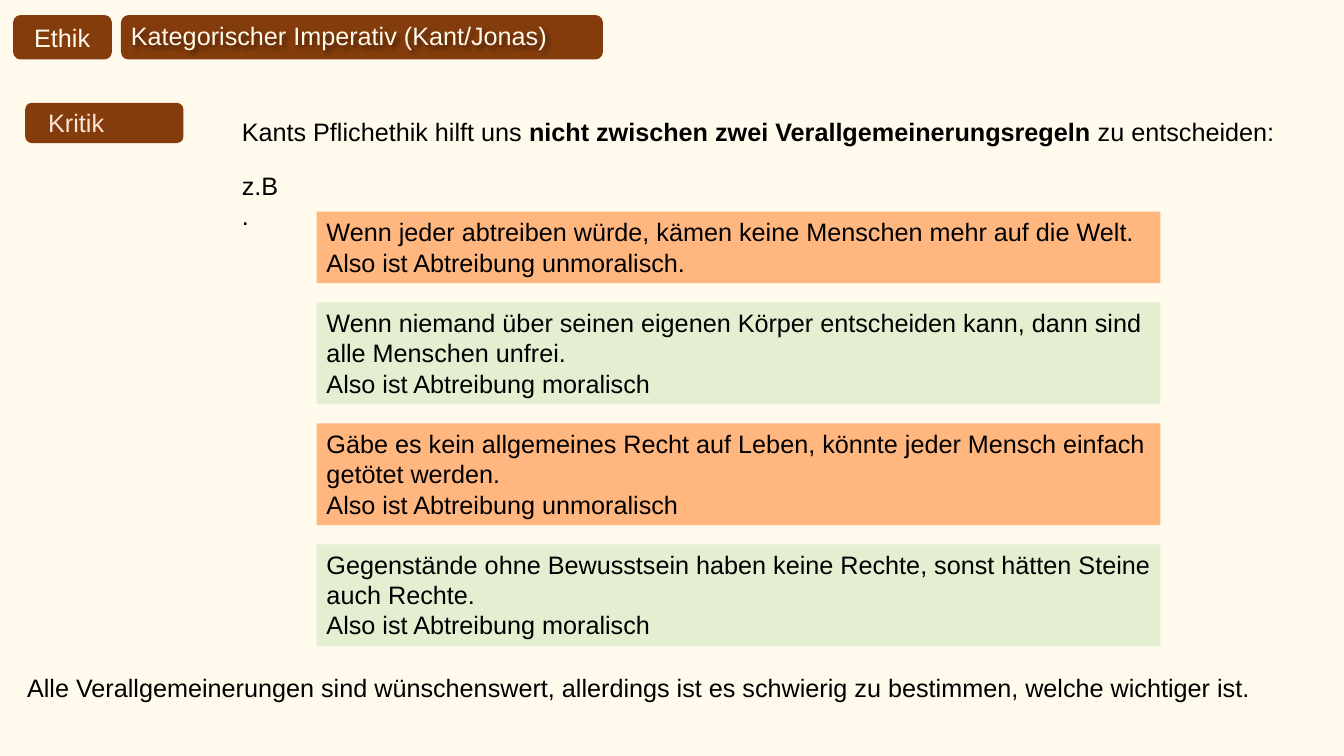
from lxml.etree import SubElement
from pptx import Presentation
from pptx.dml.color import RGBColor
from pptx.enum.shapes import MSO_SHAPE
from pptx.enum.text import MSO_ANCHOR, PP_ALIGN
from pptx.oxml.ns import qn
from pptx.util import Inches, Pt

CREAM = RGBColor(0xFF, 0xFA, 0xEB)
BROWN = RGBColor(0x84, 0x3C, 0x0C)
PEACH = RGBColor(0xFB, 0xE5, 0xD6)
ORANGE = RGBColor(0xFF, 0x66, 0x00)
GREEN = RGBColor(0xC5, 0xE0, 0xB4)
BLACK = RGBColor(0x00, 0x00, 0x00)

# left, top, width, height
BADGES = [
    (0.25, 1.02, 1.57, 0.4),
    (1.2, 0.15, 4.78, 0.44),
    (0.13, 0.15, 0.98, 0.44),
]

# place, colour, spans as (text, bold)
LABELS = [
    ((0.38, 1.02, 6.76, 0.4), PEACH, [("Kritik", False)]),
    ((0.24, 0.17, 0.88, 0.4), CREAM, [("Ethik", False)]),
    ((2.3, 1.1, 10.57, 0.4), BLACK, [
        ("Kants Pflichethik hilft uns ", False),
        ("nicht zwischen zwei Verallgemeinerungsregeln ", True),
        ("zu entscheiden:", False),
    ]),
    ((2.3, 1.64, 0.61, 0.4), BLACK, [("z.B.", False)]),
    ((0.17, 6.62, 12.77, 0.4), BLACK, [
        ("Alle Verallgemeinerungen sind wünschenswert, allerdings ist es "
         "schwierig zu bestimmen, welche wichtiger ist.", False),
    ]),
]
TITLE = ((1.2, 0.03, 5.91, 0.64), CREAM, [("Kategorischer Imperativ (Kant/Jonas)", False)])

# height, colour, premise, conclusion
ARGUMENTS = [
    (0.71, ORANGE, "Wenn jeder abtreiben würde, kämen keine Menschen mehr auf die Welt.",
     "Also ist Abtreibung unmoralisch."),
    (1.01, GREEN, "Wenn niemand über seinen eigenen Körper entscheiden kann, dann sind "
     "alle Menschen unfrei.", "Also ist Abtreibung moralisch"),
    (1.01, ORANGE, "Gäbe es kein allgemeines Recht auf Leben, könnte jeder Mensch einfach "
     "getötet werden.", "Also ist Abtreibung unmoralisch"),
    (1.01, GREEN, "Gegenstände ohne Bewusstsein haben keine Rechte, sonst hätten "
     "Steine auch Rechte.", "Also ist Abtreibung moralisch"),
]
ARGUMENT_LEFT, ARGUMENT_TOP, ARGUMENT_WIDTH, ARGUMENT_GAP = 3.14, 2.1, 8.37, 0.19
ARGUMENT_ALPHA = 46


def add_panel(page, kind, place, colour):
    panel = page.shapes.add_shape(kind, *map(Inches, place))
    panel.shadow.inherit = False
    panel.fill.solid()
    panel.fill.fore_color.rgb = colour
    panel.line.fill.background()
    return panel


def write(box, paragraphs, colour, anchor=MSO_ANCHOR.TOP):
    """Fill a box with paragraphs, each a list of (text, bold) spans."""
    frame = box.text_frame
    frame.word_wrap = True
    frame.vertical_anchor = anchor
    for index, spans in enumerate(paragraphs):
        para = frame.add_paragraph() if index else frame.paragraphs[0]
        para.alignment = PP_ALIGN.LEFT
        for text, bold in spans:
            span = para.add_run()
            span.text = text
            for name, value in {"name": "Arial", "size": Pt(18), "bold": bold}.items():
                setattr(span.font, name, value)
            span.font.color.rgb = colour


def add_label(page, place, colour, spans, anchor=MSO_ANCHOR.TOP):
    box = page.shapes.add_textbox(*map(Inches, place))
    write(box, [spans], colour, anchor)
    return box


def set_alpha(shape, percent):
    colour = shape.fill._xPr.find(qn("a:solidFill"))[0]
    SubElement(colour, qn("a:alpha"), val=str(percent * 1000))


def add_soft_shadow(box):
    effects = SubElement(box.element.spPr, qn("a:effectLst"))
    shadow = SubElement(effects, qn("a:outerShdw"), blurRad="38100", dist="38100", dir="2700000")
    colour = SubElement(shadow, qn("a:srgbClr"), val=str(BLACK))
    SubElement(colour, qn("a:alpha"), val="43000")


def main():
    deck = Presentation()
    deck.slide_width, deck.slide_height = Inches(13.33), Inches(7.5)
    page = deck.slides.add_slide(deck.slide_layouts[6])
    page.background.fill.solid()
    page.background.fill.fore_color.rgb = CREAM

    for place in BADGES:
        add_panel(page, MSO_SHAPE.ROUNDED_RECTANGLE, place, BROWN)
    for place, colour, spans in LABELS:
        add_label(page, place, colour, spans)
    add_soft_shadow(add_label(page, *TITLE, anchor=MSO_ANCHOR.MIDDLE))

    top = ARGUMENT_TOP
    for height, colour, premise, conclusion in ARGUMENTS:
        place = (ARGUMENT_LEFT, top, ARGUMENT_WIDTH, height)
        panel = add_panel(page, MSO_SHAPE.RECTANGLE, place, colour)
        set_alpha(panel, ARGUMENT_ALPHA)
        write(panel, [[(premise, False)], [(conclusion, False)]], BLACK)
        top += height + ARGUMENT_GAP

    deck.save("out.pptx")


if __name__ == "__main__":
    main()
